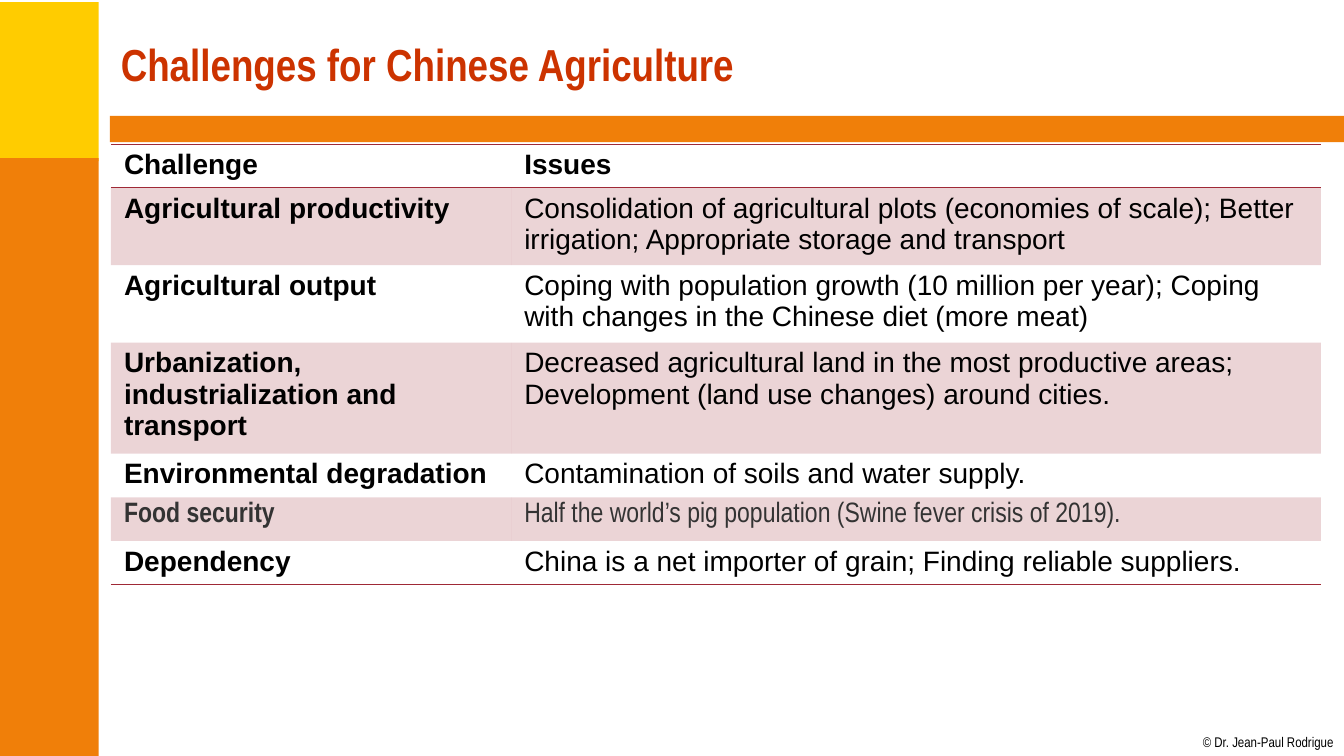
from lxml.etree import SubElement
from pptx import Presentation
from pptx.dml.color import RGBColor
from pptx.enum.shapes import MSO_SHAPE
from pptx.enum.text import MSO_ANCHOR
from pptx.oxml.ns import qn
from pptx.util import Inches, Pt

TITLE = "Challenges for Chinese Agriculture"
CREDIT = "© Dr. Jean-Paul Rodrigue"
HEADER = ("Challenge", "Issues")
CHALLENGES = [
    ("Agricultural productivity",
     "Consolidation of agricultural plots (economies of scale); Better irrigation; "
     "Appropriate storage and transport"),
    ("Agricultural output",
     "Coping with population growth (10 million per year); Coping with changes in "
     "the Chinese diet (more meat)"),
    ("Urbanization, industrialization and transport",
     "Decreased agricultural land in the most productive areas; Development (land "
     "use changes) around cities."),
    ("Environmental degradation", "Contamination of soils and water supply."),
    ("Food security", "Half the world’s pig population (Swine fever crisis of 2019)."),
    ("Dependency", "China is a net importer of grain; Finding reliable suppliers."),
]
ROW_LINES = (1, 2, 2, 3, 1, 1, 1)
NARROW_ROW = 5
COLORS = {"yellow": "FFCC00", "orange": "F07F09", "title": "CC3300",
          "wine": "9F2936", "black": "000000", "gray": "333333"}
WIDTH, HEIGHT = 13.33, 7.5
SIDE_LEFT, SIDE_WIDTH, SIDE_SPLIT = -0.02, 1, 1.57
LEFT, TABLE_TOP, COLUMNS = 1.1, 1.43, (3.97, 8.03)
BANDS = [
    (SIDE_LEFT, 0.02, SIDE_WIDTH, 1.58, "yellow"),
    (SIDE_LEFT, SIDE_SPLIT, SIDE_WIDTH, HEIGHT - SIDE_SPLIT, "orange"),
    (1.09, 1.15, WIDTH - 1.09, 0.26, "orange"),
]


def rgb(name):
    return RGBColor.from_string(COLORS[name])


def write(tf, text, size, color, font="Arial", bold=False):
    r = tf.paragraphs[0].add_run()
    r.text = text
    r.font.name, r.font.size, r.font.bold = font, Pt(size), bold
    r.font.color.rgb = rgb(color)


def add_text(slide, box, text, **style):
    tf = slide.shapes.add_textbox(*map(Inches, box)).text_frame
    write(tf, text, **style)
    return tf


def set_borders(cell, ruled):
    """Rule the sides named in ruled and clear the others."""
    tc_pr = cell._tc.get_or_add_tcPr()
    for side in "LRTB":
        ln = SubElement(tc_pr, qn("a:ln" + side), w=str(Pt(1)))
        if side in ruled:
            fill = SubElement(ln, qn("a:solidFill"))
            SubElement(fill, qn("a:srgbClr"), val=COLORS["wine"])
        else:
            SubElement(ln, qn("a:noFill"))


def shade(cell, banded):
    if not banded:
        cell.fill.background()
        return
    cell.fill.solid()
    cell.fill.fore_color.rgb = rgb("wine")
    color = cell._tc.tcPr.find(qn("a:solidFill")).find(qn("a:srgbClr"))
    SubElement(color, qn("a:alpha"), val="20000")


def add_challenge_table(slide):
    rows = [HEADER] + CHALLENGES
    heights = [0.1 + 0.31 * n for n in ROW_LINES]
    heights[NARROW_ROW] = 0.37
    frame = slide.shapes.add_table(
        len(rows), len(COLUMNS), Inches(LEFT), Inches(TABLE_TOP),
        Inches(sum(COLUMNS)), Inches(sum(heights)))
    table = frame.table
    table.horz_banding = table.first_row = False
    for column, width in zip(table.columns, COLUMNS):
        column.width = Inches(width)
    ruled = {0: "TB", 1: "T", len(rows) - 1: "B"}
    for i, texts in enumerate(rows):
        table.rows[i].height = Inches(heights[i])
        font, color = ("Arial Narrow", "gray") if i == NARROW_ROW else ("Arial", "black")
        for j, text in enumerate(texts):
            cell = table.cell(i, j)
            cell.margin_left = cell.margin_right = Inches(0.13)
            cell.margin_top = cell.margin_bottom = Inches(0.05)
            set_borders(cell, ruled.get(i, ""))
            shade(cell, i % 2 == 1)
            write(cell.text_frame, text, 20, color, font, bold=i == 0 or j == 0)


def main():
    prs = Presentation()
    prs.slide_width, prs.slide_height = Inches(WIDTH), Inches(HEIGHT)
    slide = prs.slides.add_slide(prs.slide_layouts[6])
    for *box, color in BANDS:
        sp = slide.shapes.add_shape(MSO_SHAPE.RECTANGLE, *map(Inches, box))
        sp.shadow.inherit = False
        sp.fill.solid()
        sp.fill.fore_color.rgb = rgb(color)
        sp.line.fill.background()
    credit = add_text(slide, (11.93, 7.28, 1.31, 0.17), CREDIT,
                      size=10, color="black", font="Arial Narrow")
    credit.margin_left = credit.margin_right = 0
    credit.margin_top = credit.margin_bottom = 0
    credit.word_wrap = False
    title = add_text(slide, (LEFT, 0.11, sum(COLUMNS), 1.04), TITLE,
                     size=32, color="title", font="Arial Narrow", bold=True)
    title.word_wrap = True
    title.vertical_anchor = MSO_ANCHOR.MIDDLE
    add_challenge_table(slide)
    prs.save("out.pptx")


if __name__ == "__main__":
    main()
